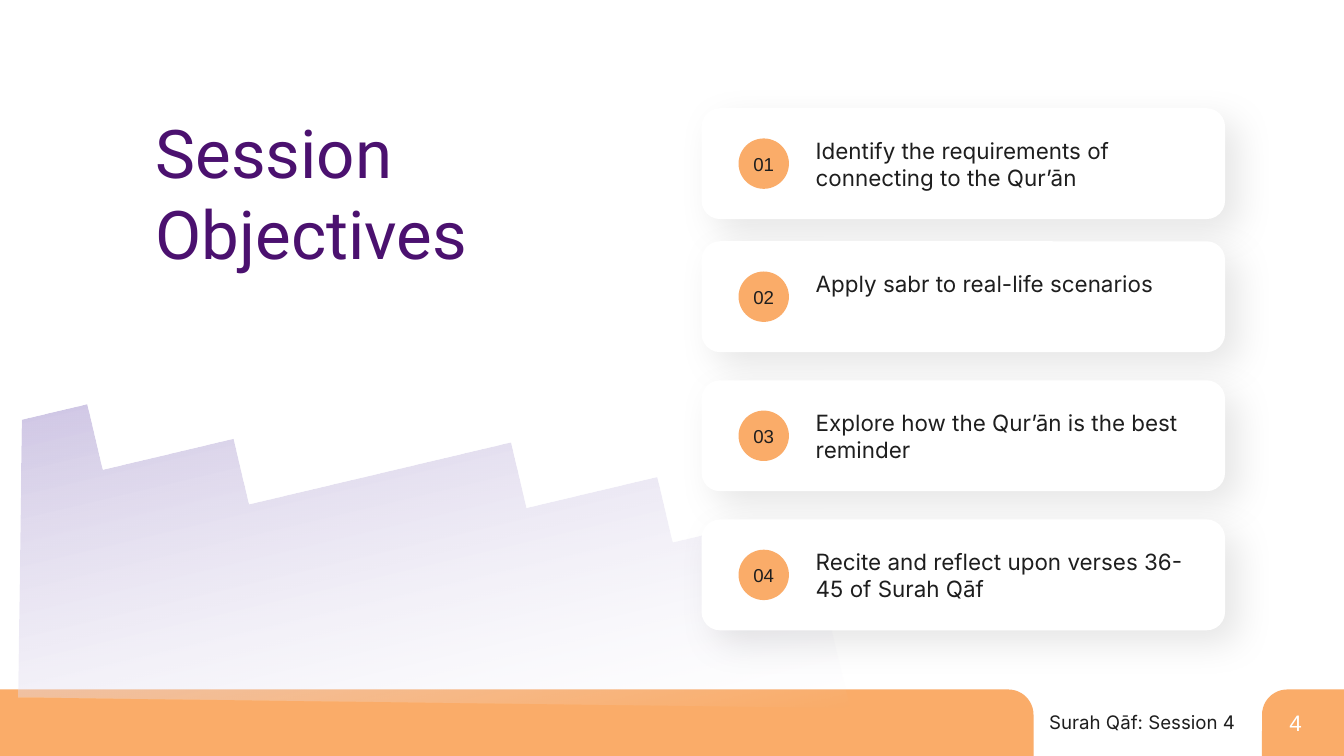
import math

import pptx
import pptx.dml.color
import pptx.enum.shapes
import pptx.enum.text
import pptx.oxml
import pptx.oxml.ns
import pptx.util

RGBColor = pptx.dml.color.RGBColor
MSO_SHAPE = pptx.enum.shapes.MSO_SHAPE
PP_ALIGN = pptx.enum.text.PP_ALIGN

ORANGE = RGBColor(0xFA, 0xAC, 0x69)
PURPLE = RGBColor(0x4B, 0x11, 0x6F)
LILAC = RGBColor(0xC3, 0xB8, 0xDE)
INK = RGBColor(0x1E, 0x1E, 0x1E)
WHITE = RGBColor(0xFF, 0xFF, 0xFF)

COLS, ROWS = 20, 11.25
CELL = pptx.util.Inches(1)

OBJECTIVES = [
    (1.61, "Identify the requirements of connecting to the Qur’ān"),
    (3.59, "Apply sabr to real-life scenarios"),
    (5.66, "Explore how the Qur’ān is the best reminder"),
    (7.73, "Recite and reflect upon verses 36-45 of Surah Qāf"),
]

WAVE_TILT = 13.3
WAVE_CENTRE = (5.765, 8.38)
WAVE_START = (0.26, 6.34)
WAVE_CURVES = [
    [(1.27, 6.31), (2.61, 6.8), (3.66, 6.98)],
    [(4.93, 7.2), (5.76, 6.93), (6.78, 6.88)],
    [(7.79, 6.83), (8.98, 6.99), (10.14, 7.62)],
    [(11.15, 8.16), (12.13, 9.04), (12.38, 10.01)],
]
WAVE_BASE = [(12.41, 10.19), (-0.02, 10.22), (-0.01, 6.37)]


def cells(*box):
    return [int(v * CELL) for v in box]


def add_block(shapes, kind, box, color):
    sp = shapes.add_shape(kind, *cells(*box))
    sp.shadow.inherit = False
    sp.fill.solid()
    sp.fill.fore_color.rgb = color
    sp.line.fill.background()
    return sp


def add_text(shapes, box, lines, size, font, color, align=PP_ALIGN.LEFT):
    tf = shapes.add_textbox(*cells(*box)).text_frame
    tf.word_wrap = True
    tf.auto_size = pptx.enum.text.MSO_AUTO_SIZE.SHAPE_TO_FIT_TEXT
    tf.text = "\n".join(lines)
    for p in tf.paragraphs:
        p.alignment = align
        p.font.size = pptx.util.Pt(size)
        p.font.name = font
        p.font.color.rgb = color


def add_soft_shadow(sp):
    effects = sp._element.spPr.find(pptx.oxml.ns.qn("a:effectLst"))
    effects.append(pptx.oxml.parse_xml(
        f'<a:outerShdw {pptx.oxml.ns.nsdecls("a")} blurRad="{pptx.util.Pt(40)}" '
        f'dist="{pptx.util.Pt(20)}" dir="2700000" algn="tl" rotWithShape="0">'
        '<a:srgbClr val="000000"><a:alpha val="10000"/></a:srgbClr></a:outerShdw>'))


def bezier(start, curve, steps=24):
    for i in range(1, steps + 1):
        t = i / steps
        weights = ((1 - t) ** 3, 3 * t * (1 - t) ** 2, 3 * t * t * (1 - t), t ** 3)
        yield tuple(sum(w * pt[axis] for w, pt in zip(weights, [start, *curve]))
                    for axis in (0, 1))


def turn(point, centre, degrees):
    a = math.radians(degrees)
    dx, dy = point[0] - centre[0], point[1] - centre[1]
    return (centre[0] + dx * math.cos(a) - dy * math.sin(a),
            centre[1] + dx * math.sin(a) + dy * math.cos(a))


def add_wave(s):
    outline = [WAVE_START]
    for curve in WAVE_CURVES:
        outline += list(bezier(outline[-1], curve))
    outline += WAVE_BASE
    level = [turn(pt, WAVE_CENTRE, WAVE_TILT) for pt in outline]
    builder = s.shapes.build_freeform(*level[0], scale=CELL)
    builder.add_line_segments(level[1:], close=True)
    sp = builder.convert_to_shape()
    sp.rotation = 360 - WAVE_TILT
    sp.shadow.inherit = False
    sp.line.fill.background()
    sp.fill.gradient()
    sp.fill.gradient_angle = 270
    for stop, position, color in zip(sp.fill.gradient_stops, (0, 1), (LILAC, WHITE)):
        stop.position = position
        stop.color.rgb = color
    clear = sp._element.spPr.findall(".//" + pptx.oxml.ns.qn("a:srgbClr"))[-1]
    clear.append(pptx.oxml.parse_xml(
        f'<a:alpha {pptx.oxml.ns.nsdecls("a")} val="0"/>'))


def add_footer(s, x, y, w, h):
    tab_w, bar_w = 1.22, 15.38
    tab = add_block(s.shapes, MSO_SHAPE.ROUND_1_RECTANGLE,
                    (x + w - tab_w, y, tab_w, h), ORANGE)
    tab._element.spPr.xfrm.set("flipH", "1")
    bar = add_block(s.shapes, MSO_SHAPE.ROUND_1_RECTANGLE, (x, y, bar_w, h), ORANGE)
    for sp in (tab, bar):
        sp.adjustments[0] = 0.379
    add_text(s.shapes, (x + 14.87, y + 0.27, 3.61, 0.44), ["Surah Qāf: Session 4"],
             20, "Inter", INK, PP_ALIGN.RIGHT)
    add_text(s.shapes, (x + 19.09, y + 0.24, 0.61, 0.5), ["4"], 24, "Arial", WHITE)


def add_card(s, x, y, w, h, number, objective):
    shapes = s.shapes.add_group_shape().shapes
    badge = 0.75
    badge_x, badge_y = x + 0.55, y + (h - badge) / 2
    add_soft_shadow(add_block(shapes, MSO_SHAPE.ROUNDED_RECTANGLE, (x, y, w, h), WHITE))
    add_block(shapes, MSO_SHAPE.OVAL, (badge_x, badge_y, badge, badge), ORANGE)
    add_text(shapes, (badge_x, badge_y + 0.16, badge, 0.44), [f"{number:02}"],
             20, "Arial", INK, PP_ALIGN.CENTER)
    add_text(shapes, (x + 1.6, y + 0.38, 5.71, 0.91), [objective], 24, "Inter", INK)


def main():
    prs = pptx.Presentation()
    prs.slide_width, prs.slide_height = cells(COLS, ROWS)
    s = prs.slides.add_slide(prs.slide_layouts[6])
    add_footer(s, 0, 10.26, COLS, ROWS - 10.26)
    add_wave(s)
    add_text(s.shapes, (2.22, 1.61, 8.22, 2.52), ["Session", "Objectives"],
             72, "Roboto", PURPLE)
    for number, (top, objective) in enumerate(OBJECTIVES, 1):
        add_card(s, 10.44, top, 7.79, 1.65, number, objective)
    prs.save("out.pptx")


if __name__ == "__main__":
    main()
